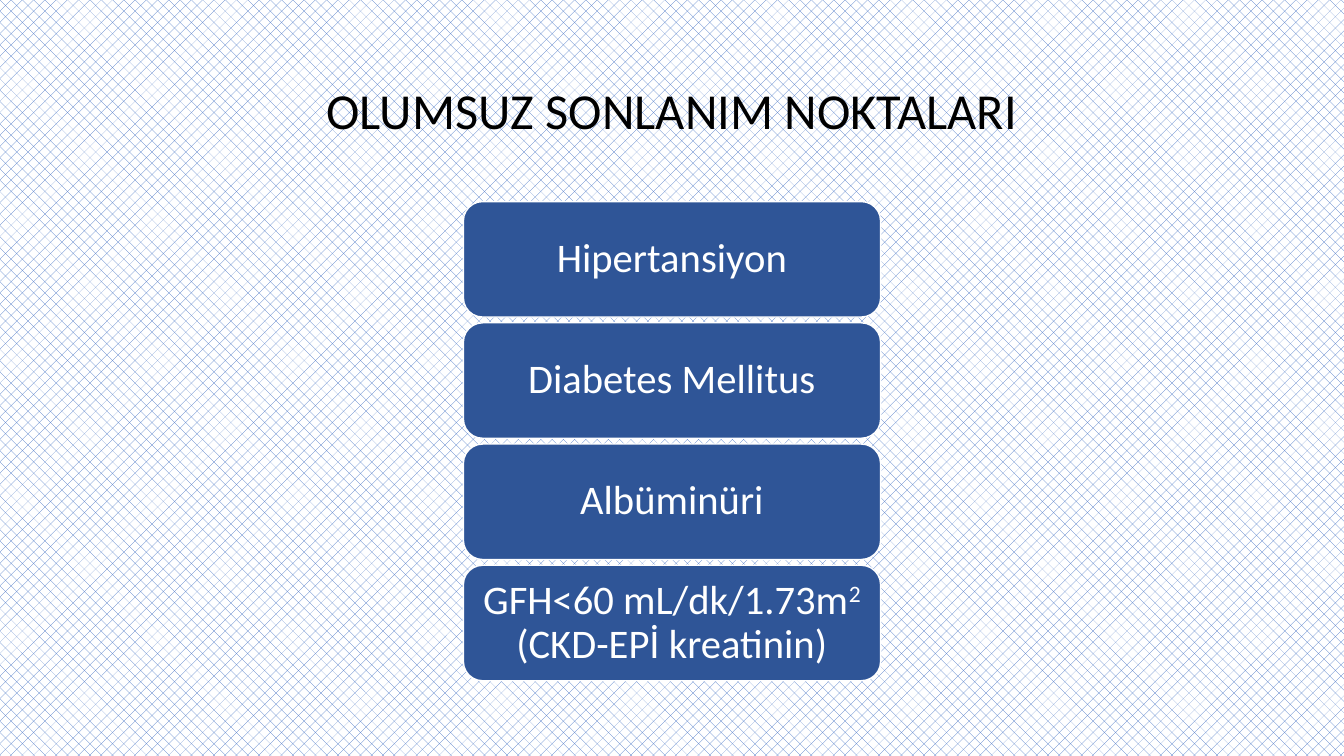
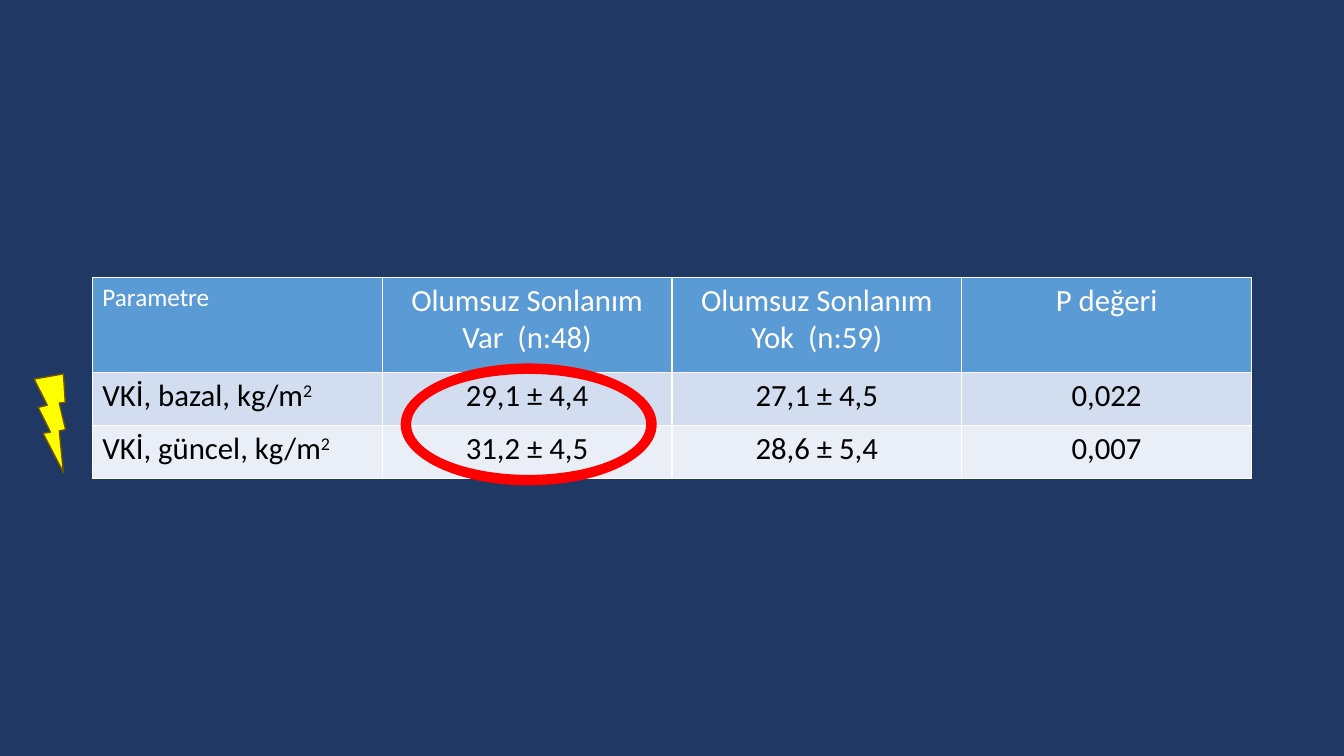
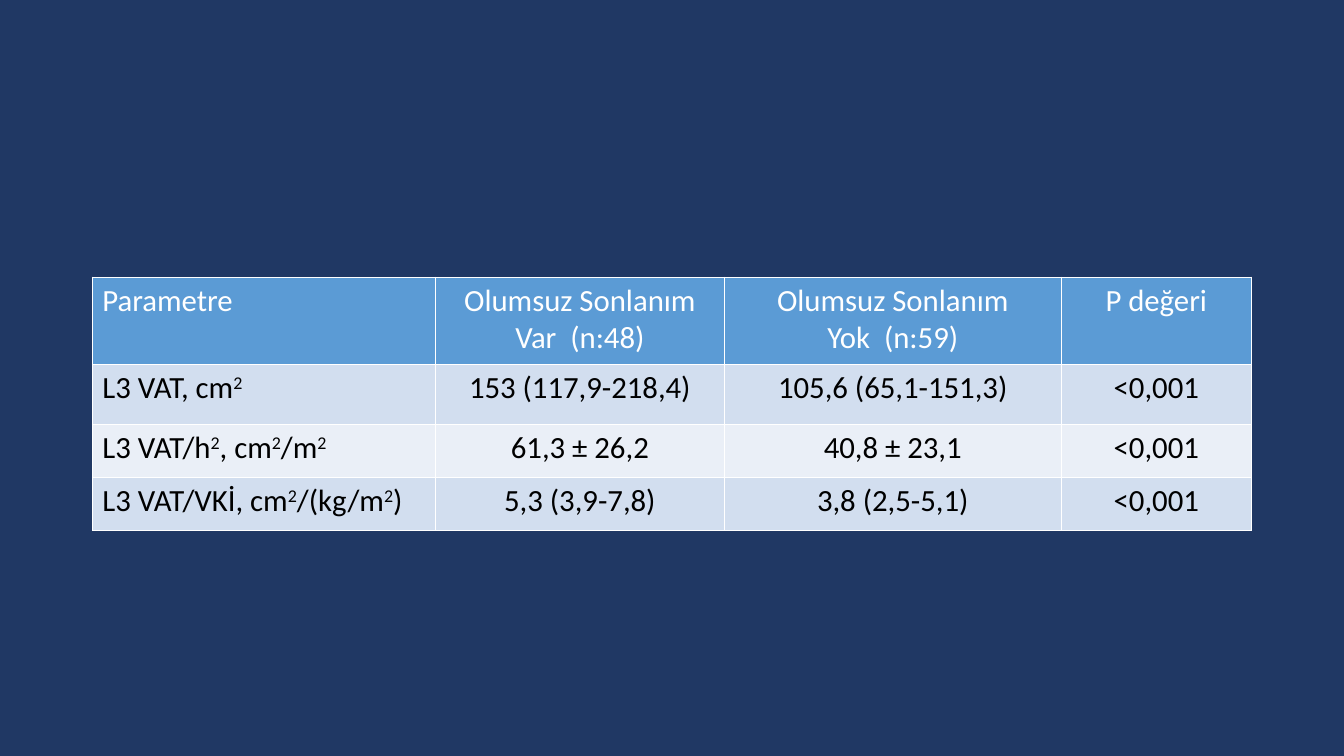
from dataclasses import dataclass
from typing import Optional

from pptx import Presentation
from pptx.dml.color import RGBColor
from pptx.enum.dml import MSO_PATTERN
from pptx.enum.shapes import MSO_SHAPE
from pptx.enum.text import MSO_ANCHOR, PP_ALIGN
from pptx.oxml.ns import qn
from pptx.shapes.autoshape import Shape
from pptx.slide import Slide
from pptx.table import _Cell
from pptx.text.text import TextFrame
from pptx.util import Pt
from lxml.etree import SubElement

FONT = "Calibri"
WHITE = RGBColor(0xFF, 0xFF, 0xFF)
BLACK = RGBColor(0x00, 0x00, 0x00)
NAVY = RGBColor(0x20, 0x38, 0x64)
BLUE = RGBColor(0x2F, 0x55, 0x97)
PATTERN_BLUE = RGBColor(0x44, 0x72, 0xC4)
HEADER_BLUE = RGBColor(0x5B, 0x9B, 0xD5)
BANDS = (RGBColor(0xD2, 0xDE, 0xEF), RGBColor(0xEA, 0xEF, 0xF7))
YELLOW = RGBColor(0xFF, 0xFF, 0x00)
OLIVE = RGBColor(0x70, 0x54, 0x00)
RED = RGBColor(0xFF, 0x00, 0x00)

TITLE_ONLY, BLANK = 5, 6
TABLE_LEFT, TABLE_TOP = 66, 198
BOX_LEFT, BOX_TOP, BOX_WIDTH, BOX_HEIGHT, BOX_PITCH = 331, 144, 298, 82.5, 86.6

ENDPOINTS = (
    "Hipertansiyon",
    "Diabetes Mellitus",
    "Albüminüri",
    "GFH<60 mL/dk/1.73m^2^ (CKD-EPİ kreatinin)",
)
HEADER = (
    "Parametre",
    "Olumsuz Sonlanım\nVar  (n:48)",
    "Olumsuz Sonlanım\nYok  (n:59)",
    "P değeri",
)


@dataclass(frozen=True)
class ResultTable:
    widths: tuple[float, ...]
    heights: tuple[float, ...]
    rows: tuple[tuple[str, ...], ...]
    corner_size: float = 22


BMI = ResultTable(
    widths=(207, 207, 207, 207),
    heights=(68, 38, 38),
    rows=(
        ("VKİ, bazal, kg/m^2^", "29,1 ± 4,4", "27,1 ± 4,5", "0,022"),
        ("VKİ, güncel, kg/m^2^", "31,2 ± 4,5", "28,6 ± 5,4", "0,007"),
    ),
    corner_size=18,
)
VISCERAL_FAT = ResultTable(
    widths=(245, 206.5, 240.5, 136),
    heights=(62.5, 42.5, 38, 38),
    rows=(
        ("L3 VAT, cm^2^", "153 (117,9-218,4)", "105,6 (65,1-151,3)", "<0,001"),
        ("L3 VAT/h^2^, cm^2^/m^2^", "61,3 ± 26,2", "40,8 ± 23,1", "<0,001"),
        ("L3 VAT/VKİ, cm^2^/(kg/m^2^)", "5,3 (3,9-7,8)", "3,8 (2,5-5,1)", "<0,001"),
    ),
)


def write(tf: TextFrame, text: str, size: float, color: RGBColor,
          align: PP_ALIGN = PP_ALIGN.CENTER, spacing: float = 1.0) -> None:
    """Write one paragraph per line; text between carets is superscript."""
    for i, line in enumerate(text.split("\n")):
        p = tf.add_paragraph() if i else tf.paragraphs[0]
        p.alignment = align
        p.line_spacing = spacing
        for j, part in enumerate(line.split("^")):
            if not part:
                continue
            r = p.add_run()
            r.text = part
            r.font.name = FONT
            r.font.size = Pt(size)
            r.font.color.rgb = color
            if j % 2:
                r.font._element.set("baseline", "30000")


def add_figure(s: Slide, kind: MSO_SHAPE, left: float, top: float, width: float,
               height: float, fill: RGBColor, line: Optional[RGBColor] = None) -> Shape:
    sp = s.shapes.add_shape(kind, Pt(left), Pt(top), Pt(width), Pt(height))
    sp.shadow.inherit = False
    sp.fill.solid()
    sp.fill.fore_color.rgb = fill
    if line is None:
        sp.line.fill.background()
    else:
        sp.line.color.rgb = line
        sp.line.width = Pt(1)
    return sp


def add_endpoint_box(s: Slide, index: int, text: str) -> None:
    sp = add_figure(s, MSO_SHAPE.ROUNDED_RECTANGLE, BOX_LEFT, BOX_TOP + index * BOX_PITCH,
                    BOX_WIDTH, BOX_HEIGHT, BLUE, WHITE)
    tf = sp.text_frame
    tf.word_wrap = True
    tf.vertical_anchor = MSO_ANCHOR.MIDDLE
    tf.margin_left = tf.margin_right = Pt(8.6)
    tf.margin_top = tf.margin_bottom = Pt(4.3)
    write(tf, text, 29, WHITE, spacing=0.9)


def format_cell(cell: _Cell, fill: RGBColor) -> None:
    """Give the cell thin white borders and a plain fill."""
    tc_pr = cell._tc.get_or_add_tcPr()
    for side in ("a:lnL", "a:lnR", "a:lnT", "a:lnB"):
        ln = SubElement(tc_pr, qn(side), w=str(Pt(1)))
        solid = SubElement(ln, qn("a:solidFill"))
        SubElement(solid, qn("a:srgbClr"), val=str(WHITE))
    cell.fill.solid()
    cell.fill.fore_color.rgb = fill


def add_result_table(s: Slide, data: ResultTable) -> None:
    rows = (HEADER, *data.rows)
    table = s.shapes.add_table(
        len(rows), len(HEADER), Pt(TABLE_LEFT), Pt(TABLE_TOP),
        Pt(sum(data.widths)), Pt(sum(data.heights))).table
    for column, width in zip(table.columns, data.widths):
        column.width = Pt(width)
    for i, (row, height) in enumerate(zip(rows, data.heights)):
        table.rows[i].height = Pt(height)
        for j, text in enumerate(row):
            cell = table.cell(i, j)
            format_cell(cell, BANDS[(i - 1) % 2] if i else HEADER_BLUE)
            write(cell.text_frame, text,
                  data.corner_size if i == j == 0 else 22,
                  BLACK if i else WHITE,
                  PP_ALIGN.CENTER if j else PP_ALIGN.LEFT)


def add_navy_slide(prs: Presentation) -> Slide:
    s = prs.slides.add_slide(prs.slide_layouts[BLANK])
    s.background.fill.solid()
    s.background.fill.fore_color.rgb = NAVY
    return s


def build_endpoints(prs: Presentation) -> None:
    s = prs.slides.add_slide(prs.slide_layouts[TITLE_ONLY])
    fill = s.background.fill
    fill.patterned()
    fill.pattern = MSO_PATTERN.PERCENT_25
    fill.fore_color.rgb = PATTERN_BLUE
    fill.back_color.rgb = WHITE
    title = s.shapes.title
    title.left, title.top, title.width, title.height = Pt(66), Pt(29), Pt(828), Pt(104)
    title.text_frame.vertical_anchor = MSO_ANCHOR.MIDDLE
    write(title.text_frame, "OLUMSUZ SONLANIM NOKTALARI", 36, BLACK, spacing=0.9)
    for i, text in enumerate(ENDPOINTS):
        add_endpoint_box(s, i, text)


def build_bmi(prs: Presentation) -> None:
    s = add_navy_slide(prs)
    bolt = add_figure(s, MSO_SHAPE.LIGHTNING_BOLT, 14.4, 266.4, 45.4, 64.8, YELLOW, OLIVE)
    bolt.rotation = 23.1
    add_result_table(s, BMI)
    ring = add_figure(s, MSO_SHAPE.DONUT, 286.2, 259.6, 182.9, 87.1, RED)
    ring.adjustments[0] = 0.086


def build_visceral_fat(prs: Presentation) -> None:
    add_result_table(add_navy_slide(prs), VISCERAL_FAT)


def main() -> None:
    prs = Presentation()
    prs.slide_width, prs.slide_height = Pt(960), Pt(540)
    build_endpoints(prs)
    build_bmi(prs)
    build_visceral_fat(prs)
    prs.save("out.pptx")


if __name__ == "__main__":
    main()
